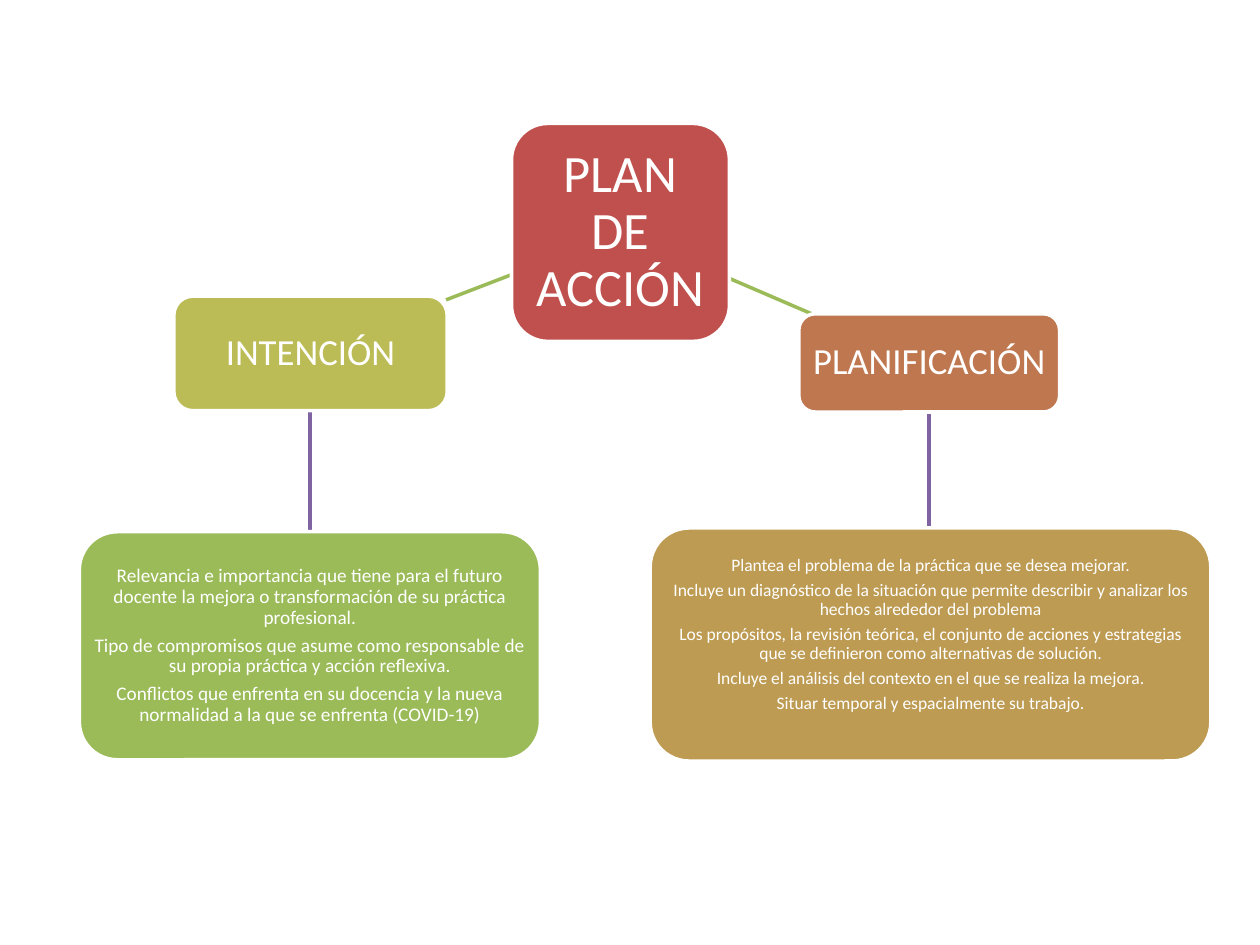
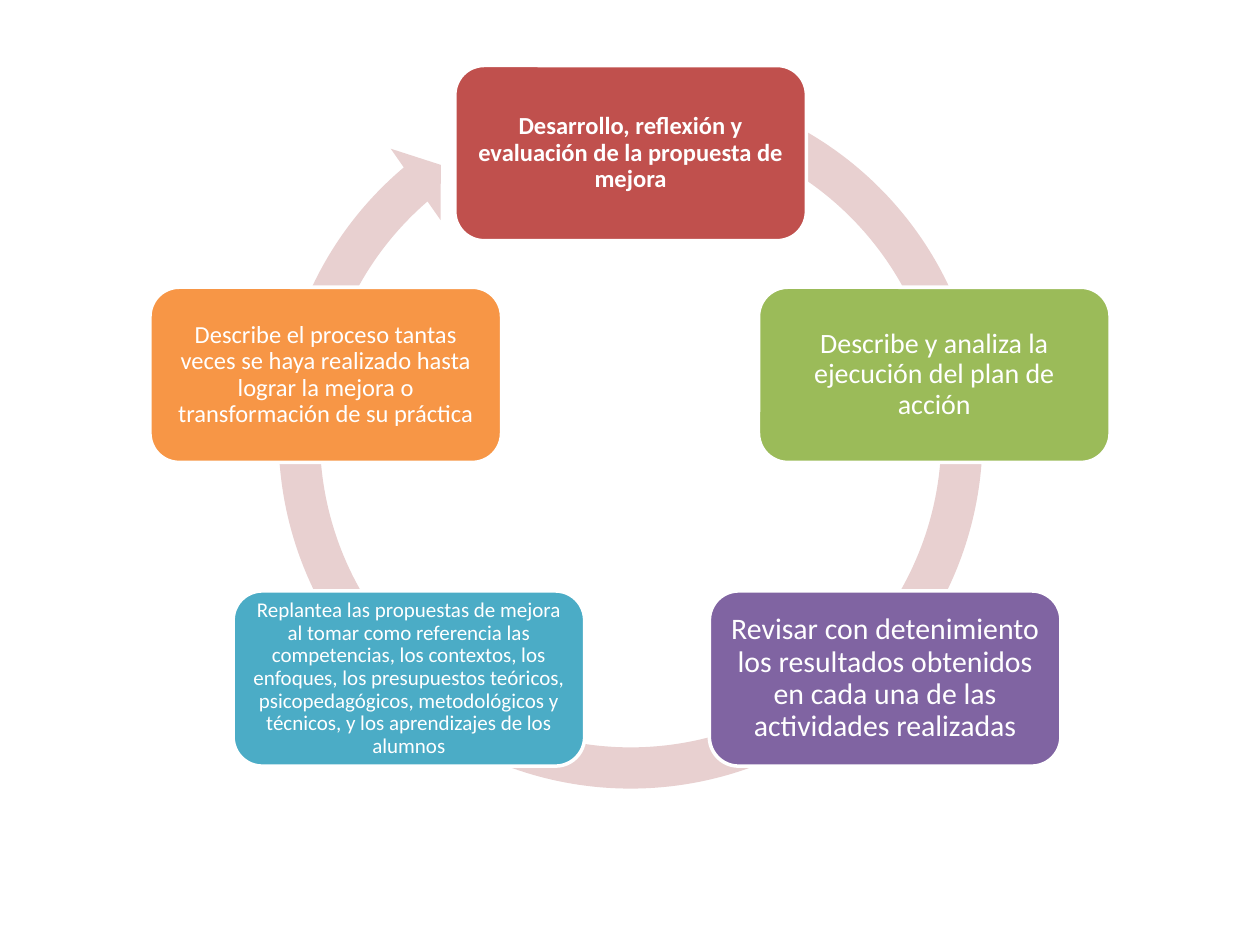
"""Build two slides: an action plan tree and an improvement cycle."""
from pptx import Presentation, util as u
from pptx.dml import color as c
from pptx.enum import shapes as s, text as t
from pptx.oxml import ns, xmlchemy as x

THEME = dict(
    font="Calibri", white="FFFFFF", red="C0504D", green="9BBB59",
    plum="8064A2", teal="4BACC6", gold="F79646", olive="BCBC56",
    rust="BF7750", sand="BD9B53", blush="E8D0D0",
    root=30, head=21, note=11, small=10, step=14, mid=16, big=17, tight=12,
    edge=2, lead=0.9, gap=0.35,
)
COLS, ROWS = 100, 75

deck = Presentation()
deck.slide_width, deck.slide_height = u.Inches(10), u.Inches(7.5)
col, row = deck.slide_width / COLS, deck.slide_height / ROWS


def grid(*spots):
    """Turn alternating columns and rows into slide lengths."""
    return [int(n * (row if i % 2 else col)) for i, n in enumerate(spots)]


def node(page, spot, fill, size, pad, lines, bold=False, foot=0):
    """Draw a rounded box with centred white text."""
    box = page.shapes.add_shape(s.MSO_SHAPE.ROUNDED_RECTANGLE, *grid(*spot))
    box.shadow.inherit = False
    box.fill.solid()
    box.fill.fore_color.rgb = c.RGBColor.from_string(THEME[fill])
    box.line.color.rgb = c.RGBColor.from_string(THEME["white"])
    box.line.width = u.Pt(THEME["edge"])
    frame = box.text_frame
    inset = u.Inches(pad)
    look = dict(word_wrap=True, vertical_anchor=t.MSO_ANCHOR.MIDDLE,
                margin_left=inset, margin_right=inset, margin_top=inset,
                margin_bottom=inset + u.Inches(foot))
    for key, val in look.items():
        setattr(frame, key, val)
    frame.text = "\n".join(lines)
    pts = THEME[size]
    flow = dict(alignment=t.PP_ALIGN.CENTER, line_spacing=THEME["lead"],
                space_after=u.Pt(pts * THEME["gap"]))
    face = dict(name=THEME["font"], size=u.Pt(pts), bold=bold)
    for par in frame.paragraphs:
        for key, val in flow.items():
            setattr(par, key, val)
        for run in par.runs:
            for key, val in face.items():
                setattr(run.font, key, val)
            run.font.color.rgb = c.RGBColor.from_string(THEME["white"])


blank = deck.slide_layouts[6]
plan = deck.slides.add_slide(blank)

links = [
    ((40.6, 21.8, 35.4, 23.8), "green"),
    ((57.9, 22.1, 64.4, 24.9), "green"),
    ((24.6, 32.5, 24.6, 42.2), "plum"),
    ((73.75, 32.7, 73.75, 41.9), "plum"),
]
for ends, tint in links:
    link = plan.shapes.add_connector(s.MSO_CONNECTOR.STRAIGHT, *grid(*ends))
    link.line.color.rgb = c.RGBColor.from_string(THEME[tint])
    link.line.width = u.Pt(THEME["edge"])
    x.OxmlElement("a:effectLst")
    link._element.spPr.append(x.OxmlElement("a:effectLst"))

node(plan, (40.6, 9.8, 17.3, 17.3), "red", "root", 0.08, ["PLAN DE ACCIÓN"])
node(plan, (63.4, 24.9, 20.7, 7.8), "rust", "head", 0.06, ["PLANIFICACIÓN"])
node(plan, (13.8, 23.5, 21.7, 9.1), "olive", "head", 0.06, ["INTENCIÓN"])
node(plan, (51.6, 41.9, 44.5, 18.5), "sand", "small", 0.03, [
    "Plantea el problema de la práctica que se desea mejorar.",
    "Incluye un diagnóstico de la situación que permite describir y analizar "
    "los hechos alrededor del problema",
    "Los propósitos, la revisión teórica, el conjunto de acciones y "
    "estrategias que se definieron como alternativas de solución.",
    "Incluye el análisis del contexto en el que se realiza la mejora.",
    "Situar temporal y espacialmente su trabajo.",
], foot=0.15)
node(plan, (6.3, 42.2, 36.6, 18.1), "green", "note", 0.03, [
    "Relevancia e importancia que tiene para el futuro docente la mejora o "
    "transformación de su práctica profesional.",
    "Tipo de compromisos que asume como responsable de su propia práctica y "
    "acción reflexiva.",
    "Conflictos que enfrenta en su docencia y la nueva normalidad a la que "
    "se enfrenta (COVID-19)",
])

cycle = deck.slides.add_slide(blank)
ring = cycle.shapes.add_shape(s.MSO_SHAPE.CIRCULAR_ARROW,
                              *grid(20.3, 4.9, 59.5, 59.5))
for i, bend in enumerate((0.055, 3.307, 137.735, 173.874, 0.058)):
    ring.adjustments[i] = bend
ring.shadow.inherit = False
ring.fill.solid()
ring.fill.fore_color.rgb = c.RGBColor.from_string(THEME["blush"])
ring.line.fill.background()

wide, tall = 27.9, 13.9
top, mid, low = 5.2, 22.8, 46.9
steps = [
    (36.1, top, "red", "step", 0.06,
     "Desarrollo, reflexión y evaluación de la propuesta de mejora"),
    (60.2, mid, "green", "mid", 0.07,
     "Describe y analiza la ejecución del plan de acción"),
    (56.3, low, "plum", "big", 0.07,
     "Revisar con detenimiento los resultados obtenidos en cada una de las "
     "actividades realizadas"),
    (18.5, low, "teal", "tight", 0.05,
     "Replantea las propuestas de mejora al tomar como referencia las "
     "competencias, los contextos, los enfoques, los presupuestos teóricos, "
     "psicopedagógicos, metodológicos y técnicos, y los aprendizajes de los "
     "alumnos"),
    (11.9, mid, "gold", "step", 0.06,
     "Describe el proceso tantas veces se haya realizado hasta lograr la "
     "mejora o transformación de su práctica"),
]
for left, high, fill, size, pad, words in steps:
    node(cycle, (left, high, wide, tall), fill, size, pad, [words],
         bold=high == top)

deck.save("out.pptx")
